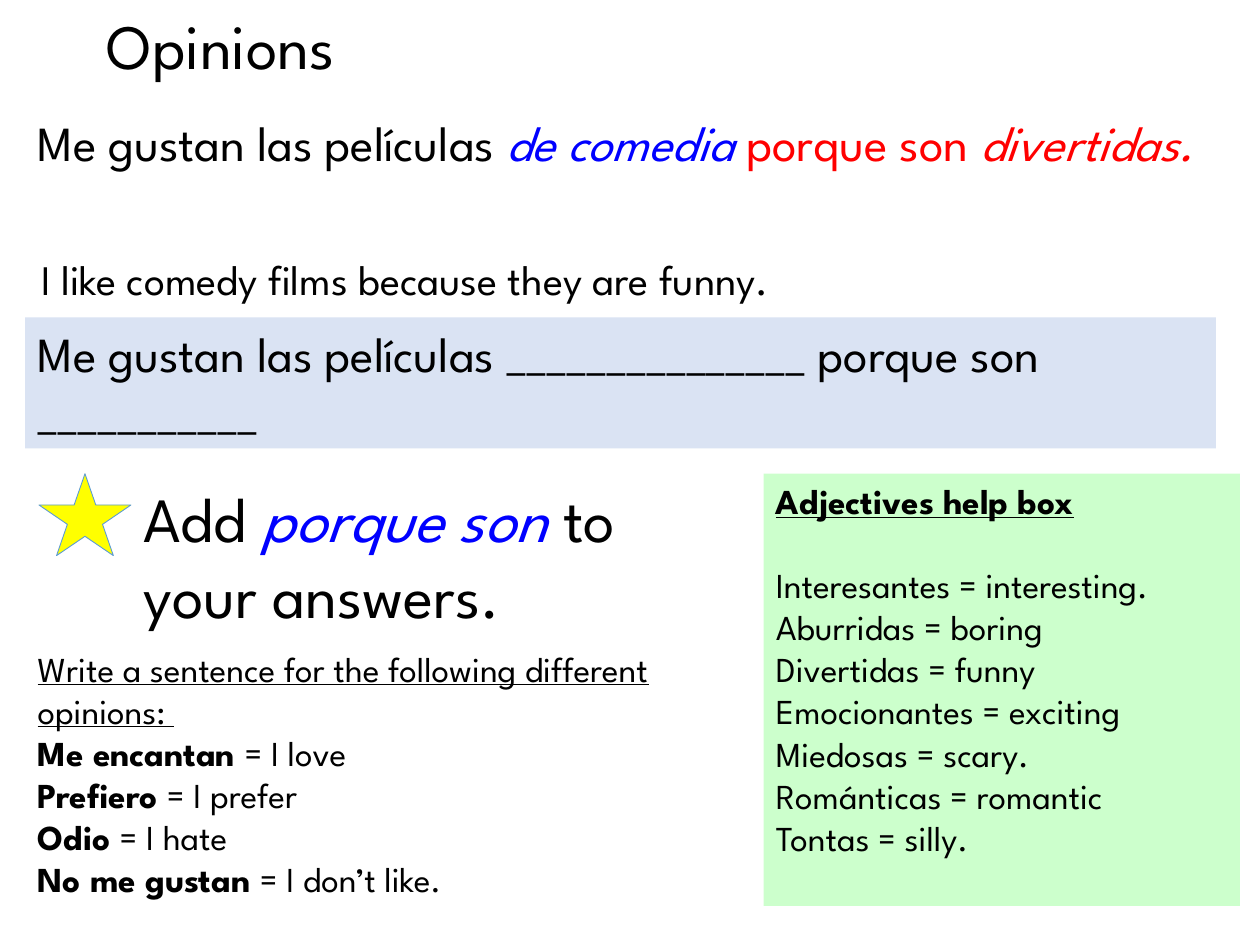
from pptx import Presentation
from pptx.dml.color import RGBColor
from pptx.enum.shapes import MSO_SHAPE
from pptx.enum.text import MSO_ANCHOR, PP_ALIGN
from pptx.util import Inches, Pt

BLACK = RGBColor(0x00, 0x00, 0x00)
BLUE = RGBColor(0x00, 0x00, 0xFF)
RED = RGBColor(0xFF, 0x00, 0x00)
YELLOW = RGBColor(0xFF, 0xFF, 0x00)
STAR_EDGE = RGBColor(0x5B, 0x9B, 0xD5)
PALE_BLUE = RGBColor(0xDA, 0xE3, 0xF3)
PALE_GREEN = RGBColor(0xCC, 0xFF, 0xCC)

COLUMNS, ROWS = 100, 75
MARGIN = 2
SECOND_HALF = 37.6

OPINIONS = [
    ("Me encantan ", "= I love"),
    ("Prefiero ", "= I prefer"),
    ("Odio ", "= I hate"),
    ("No me gustan ", "= I don’t like."),
]
ADJECTIVES = [
    "Interesantes = interesting.",
    "Aburridas = boring",
    "Divertidas = funny",
    "Emocionantes = exciting",
    "Miedosas = scary.",
    "Románticas = romantic",
    "Tontas = silly.",
]


class Worksheet:
    """Style and current slide; every place is (column, row, columns, rows)."""

    font_name = "League Spartan"

    def __init__(self, deck):
        self.column = deck.slide_width / COLUMNS
        self.row = deck.slide_height / ROWS
        self.slide = deck.slides.add_slide(deck.slide_layouts[6])

    def cells(self, place):
        left, top, width, height = place
        return (int(left * self.column), int(top * self.row),
                int(width * self.column), int(height * self.row))

    def shape(self, kind, place, fill, edge=None):
        shape = self.slide.shapes.add_shape(kind, *self.cells(place))
        shape.shadow.inherit = False
        shape.fill.solid()
        shape.fill.fore_color.rgb = fill
        if edge:
            shape.line.color.rgb = edge
            shape.line.width = Pt(0.5)
        else:
            shape.line.fill.background()
        return shape

    def text(self, place, size):
        box = self.slide.shapes.add_textbox(*self.cells(place))
        return self.prepare(box, size)

    def panel(self, place, size, fill):
        return self.prepare(self.shape(MSO_SHAPE.RECTANGLE, place, fill), size)

    def prepare(self, box, size):
        """Return a function that writes the next paragraph into the box."""
        frame = box.text_frame
        frame.word_wrap = True
        frame.vertical_anchor = MSO_ANCHOR.TOP
        unused = [frame.paragraphs[0]]

        def write(*runs, bold=None, underline=None, gap=0):
            """Each run is a string or (string, {font attribute: value})."""
            paragraph = unused.pop() if unused else frame.add_paragraph()
            paragraph.alignment = PP_ALIGN.LEFT
            if gap:
                paragraph.space_before = Pt(gap)
            font = paragraph.font
            font.name, font.size = self.font_name, Pt(size)
            font.bold, font.underline = bold, underline
            font.color.rgb = BLACK
            for item in runs:
                words, look = (item, {}) if isinstance(item, str) else item
                run = paragraph.add_run()
                run.text = words
                for attribute, value in look.items():
                    if attribute == "color":
                        run.font.color.rgb = value
                    else:
                        setattr(run.font, attribute, value)

        return write


def main():
    deck = Presentation()
    deck.slide_width, deck.slide_height = Inches(10), Inches(7.5)
    sheet = Worksheet(deck)

    sheet.text((7.5, 0, 92.5, 7.1), 36)("Opinions")

    sheet.text((MARGIN, 8.4, 99.2, 10.4), 28)(
        "Me gustan las películas ",
        ("de comedia ", {"color": BLUE, "italic": True}),
        ("porque son ", {"color": RED}),
        ("divertidas.", {"color": RED, "italic": True}))
    sheet.panel((MARGIN, 25.2, 94.5, 10.4), 28, PALE_BLUE)(
        "Me gustan las películas _______________ porque son ___________")
    sheet.text((2.3, 19.6, 96.1, 5), 24)(
        "I like comedy films because they are funny.")

    sheet.text((10.4, SECOND_HALF, 43.3, 13.1), 36)(
        "Add ",
        ("porque son ", {"color": BLUE, "italic": True}),
        "to your answers.")

    help_box = sheet.panel((60.6, SECOND_HALF, 37.8, 34.3), 20, PALE_GREEN)
    help_box("Adjectives help box", bold=True, underline=True)
    for index, adjective in enumerate(ADJECTIVES):
        help_box(adjective, gap=0 if index else 24)

    task = sheet.text((MARGIN, 50.9, 56.9, 21.2), 20)
    task("Write a sentence for the following different opinions: ",
         underline=True)
    for spanish, english in OPINIONS:
        task((spanish, {"bold": True}), english)

    sheet.shape(MSO_SHAPE.STAR_5_POINT, (3.1, SECOND_HALF, 7.3, 6.5),
                YELLOW, STAR_EDGE)

    deck.save("out.pptx")


if __name__ == "__main__":
    main()
